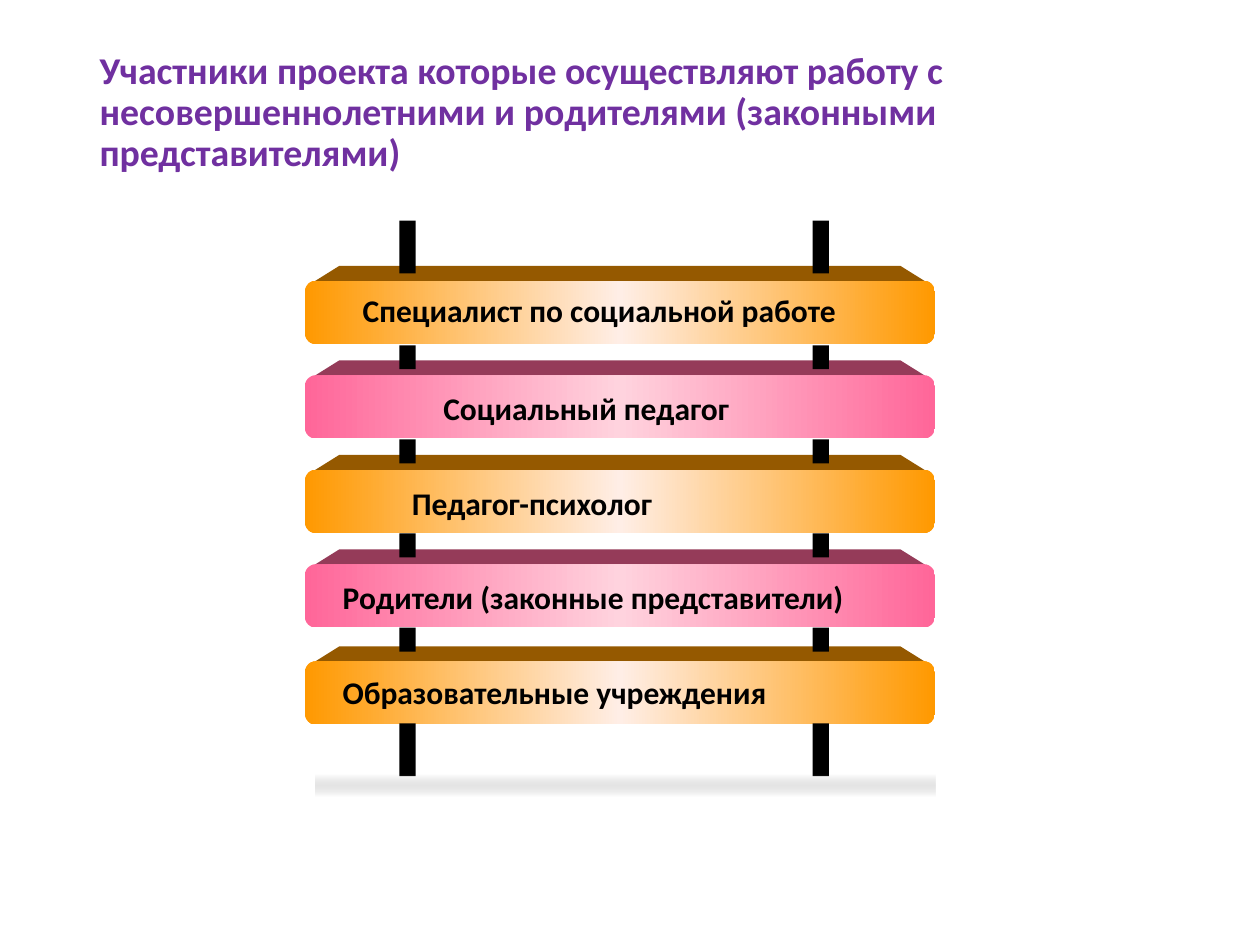
from typing import NamedTuple

from lxml import etree
from pptx import Presentation
from pptx import util as u
from pptx.dml.color import RGBColor
from pptx.enum import shapes, text
from pptx.oxml import ns

FONT = "Calibri"
SHAPE = shapes.MSO_SHAPE


class Tone(NamedTuple):
    edge: str
    mid: str
    dark: str


class Plank(NamedTuple):
    top: float
    tone: Tone
    label: str
    left: float
    drop: float
    width: float


ORANGE = Tone("FF9900", "FFEEE6", "955900")
PINK = Tone("FF6699", "FFD3DE", "953B59")
PLANKS = [
    Plank(2.23, ORANGE, "Специалист по социальной работе", 2.78, 0.03, 4.35),
    Plank(2.98, PINK, "Cоциальный педагог", 3.42, 0.06, 2.88),
    Plank(3.73, ORANGE, "Педагог-психолог", 3.17, 0.06, 2.88),
    Plank(4.48, PINK, "Родители (законные представители)", 2.62, 0.06, 4.39),
    Plank(5.25, ORANGE, "Образовательные учреждения", 2.62, 0.04, 4.39),
]
LEFT, WIDTH, HEIGHT = 2.42, 5, 0.5
POSTS = [3.17, 6.45]
PEGS = [(1.75, 0.42), *((2.74 + 0.747 * i, 0.19) for i in range(4)), (5.74, 0.42)]


def color(code: str) -> RGBColor:
    return RGBColor.from_string(code)


def add_block(parent, kind, left: float, top: float, width: float, height: float, fill: str = ""):
    """Add a preset shape with no line or shadow, filled when a colour is given."""
    block = parent.add_shape(kind, *map(u.Inches, (left, top, width, height)))
    block.shadow.inherit = False
    block.line.fill.background()
    if fill:
        block.fill.solid()
        block.fill.fore_color.rgb = color(fill)
    return block


def blend(block, edge: str, mid: str, angle: int, alphas=(100, 100, 100)) -> None:
    """Fill with a linear gradient running edge, mid, edge; alphas are percents."""
    grad = etree.Element(ns.qn("a:gradFill"), rotWithShape="1")
    stops = etree.SubElement(grad, ns.qn("a:gsLst"))
    for place, code, alpha in zip((0, 50, 100), (edge, mid, edge), alphas):
        stop = etree.SubElement(stops, ns.qn("a:gs"), pos=str(place * 1000))
        shade = etree.SubElement(stop, ns.qn("a:srgbClr"), val=code)
        if alpha < 100:
            etree.SubElement(shade, ns.qn("a:alpha"), val=str(alpha * 1000))
    etree.SubElement(grad, ns.qn("a:lin"), ang=str(angle * 60000), scaled="1")
    block._element.spPr.find(ns.qn("a:prstGeom")).addnext(grad)


def write(frame, words: str, size: float, code: str) -> None:
    para = frame.paragraphs[0]
    para.alignment = text.PP_ALIGN.LEFT
    run = para.add_run()
    run.text = words
    run.font.name, run.font.size, run.font.bold = FONT, u.Pt(size), True
    run.font.color.rgb = color(code)


def add_title(slide) -> None:
    title = slide.shapes.title
    title.left, title.top, title.width, title.height = map(u.Inches, (0.69, 0.48, 8.42, 0.84))
    frame = title.text_frame
    frame.word_wrap = True
    frame.auto_size = text.MSO_AUTO_SIZE.NONE
    frame.vertical_anchor = text.MSO_ANCHOR.MIDDLE
    frame.paragraphs[0].line_spacing = 0.9
    write(frame, "Участники проекта которые осуществляют работу с несовершеннолетними "
          "и родителями (законными представителями)", 21.6, "7030A0")


def add_plank(slide, plank: Plank) -> None:
    lid = add_block(slide.shapes, SHAPE.TRAPEZOID, LEFT + 0.05, plank.top - 0.12,
                    WIDTH - 0.1, 0.14, plank.tone.dark)
    lid.adjustments[0] = 1.6
    front = add_block(slide.shapes, SHAPE.ROUNDED_RECTANGLE, LEFT, plank.top, WIDTH, HEIGHT)
    front.adjustments[0] = 0.167
    blend(front, plank.tone.edge, plank.tone.mid, 0)
    label = slide.shapes.add_textbox(
        *map(u.Inches, (plank.left, plank.top + plank.drop, plank.width, 0.4)))
    label.text_frame.word_wrap = True
    label.text_frame.auto_size = text.MSO_AUTO_SIZE.SHAPE_TO_FIT_TEXT
    write(label.text_frame, plank.label, 18, "000000")


def add_post(slide, left: float) -> None:
    group = slide.shapes.add_group_shape()
    for top, height in PEGS:
        add_block(group.shapes, SHAPE.RECTANGLE, left, top, 0.13, height, "000000")


def main() -> None:
    deck = Presentation()
    deck.slide_width, deck.slide_height = u.Inches(10), u.Inches(7.5)
    slide = deck.slides.add_slide(deck.slide_layouts[5])
    add_title(slide)
    for plank in PLANKS:
        add_plank(slide, plank)
    for left in POSTS:
        add_post(slide, left)
    ground = add_block(slide.shapes, SHAPE.RECTANGLE, 2.5, 6.15, 4.92, 0.17)
    blend(ground, "B2B2B2", "D2D2D2", 90, (0, 58, 0))
    deck.save("out.pptx")


if __name__ == "__main__":
    main()
